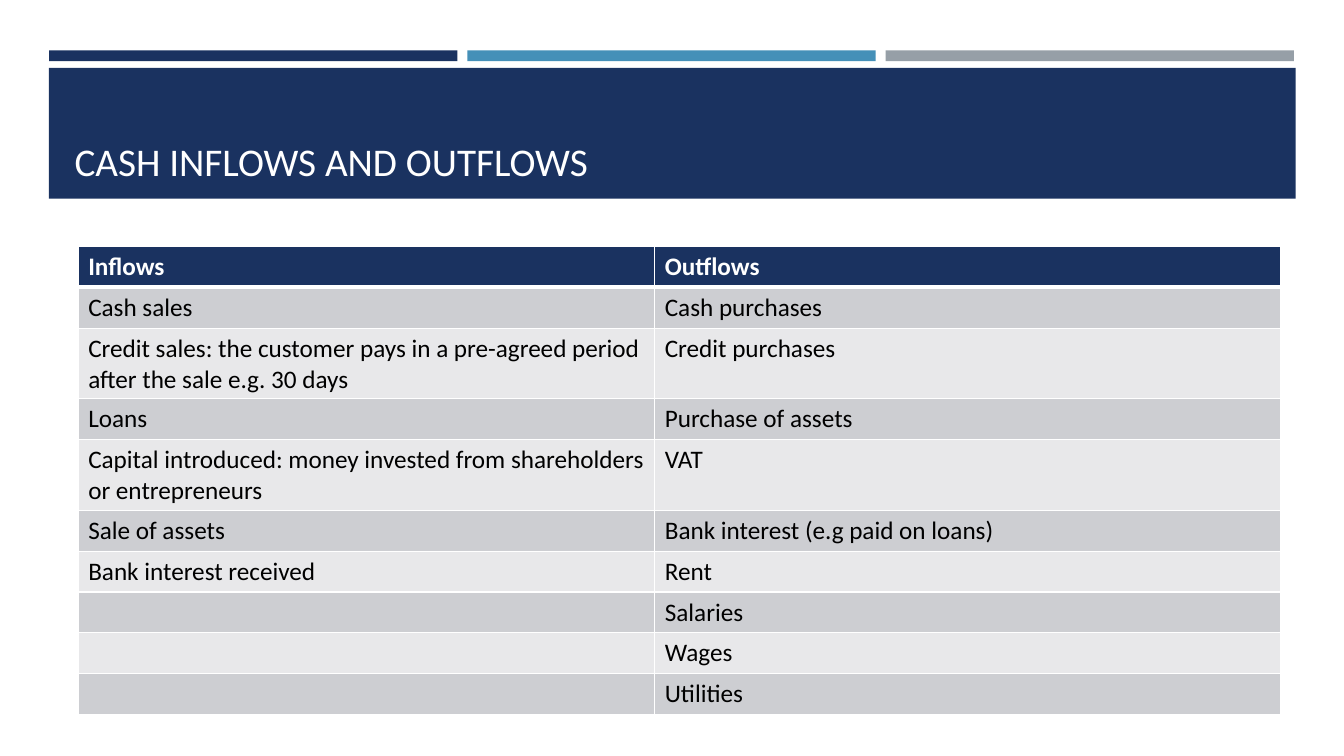
from lxml import etree
from pptx import Presentation
from pptx.dml.color import RGBColor
from pptx.enum.shapes import MSO_SHAPE
from pptx.enum.text import MSO_ANCHOR
from pptx.oxml.ns import qn
from pptx.util import Cm, Pt

RECT = MSO_SHAPE.RECTANGLE
TOP, BOTTOM = MSO_ANCHOR.TOP, MSO_ANCHOR.BOTTOM

COLORS = {
    "navy": "1A3260",
    "blue": "4590B8",
    "gray": "969FA7",
    "band_dark": "CDCED2",
    "band_light": "E8E8EA",
    "white": "FFFFFF",
    "black": "000000",
}

CASH_FLOWS = [
    ("Inflows", "Outflows"),
    ("Cash sales", "Cash purchases"),
    ("Credit sales: the customer pays in a pre-agreed period after the sale e.g. 30 days",
     "Credit purchases"),
    ("Loans", "Purchase of assets"),
    ("Capital introduced: money invested from shareholders or entrepreneurs", "VAT"),
    ("Sale of assets", "Bank interest (e.g paid on loans)"),
    ("Bank interest received", "Rent"),
    ("", "Salaries"),
    ("", "Wages"),
    ("", "Utilities"),
]


def rgb(name):
    return RGBColor.from_string(COLORS[name])


def write(tf, text, size=18, color="black", bold=False, font="Calibri", anchor=TOP):
    tf.word_wrap = True
    tf.vertical_anchor = anchor
    p = tf.paragraphs[0]
    p.font.size = Pt(size)
    if text:
        r = p.add_run()
        r.text = text
        r.font.name = font
        r.font.size = Pt(size)
        r.font.bold = bold
        r.font.color.rgb = rgb(color)


def set_borders(cell, color="white", **widths):
    tcPr = cell._tc.get_or_add_tcPr()
    for i, side in enumerate("LRTB"):
        ln = etree.Element(qn(f"a:ln{side}"), w=str(Pt(widths.get(side, 1))))
        fill = etree.SubElement(ln, qn("a:solidFill"))
        etree.SubElement(fill, qn("a:srgbClr"), val=COLORS[color])
        tcPr.insert(i, ln)


class SlideBuilder:
    def __init__(self, prs):
        self.s = prs.slides.add_slide(prs.slide_layouts[6])

    def bar(self, left, top, width, height, color):
        sp = self.s.shapes.add_shape(RECT, Cm(left), Cm(top), Cm(width), Cm(height))
        sp.shadow.inherit = False
        sp.fill.solid()
        sp.fill.fore_color.rgb = rgb(color)
        sp.line.fill.background()

    def text(self, left, top, width, height, text, **fmt):
        sp = self.s.shapes.add_textbox(Cm(left), Cm(top), Cm(width), Cm(height))
        write(sp.text_frame, text, **fmt)

    def table(self, left, top, col_widths, row_height, rows):
        frame = self.s.shapes.add_table(
            len(rows), len(col_widths), Cm(left), Cm(top),
            Cm(sum(col_widths)), Cm(row_height * len(rows)))
        table = frame.table
        for col, width in zip(table.columns, col_widths):
            col.width = Cm(width)
        for i, values in enumerate(rows):
            table.rows[i].height = Cm(row_height)
            header = i == 0
            band = "navy" if header else "band_dark" if i % 2 else "band_light"
            for j, value in enumerate(values):
                cell = table.cell(i, j)
                cell.fill.solid()
                cell.fill.fore_color.rgb = rgb(band)
                set_borders(cell, T=3 if i == 1 else 1, B=3 if header else 1)
                write(cell.text_frame, value, bold=header,
                      color="white" if header else "black")


def main():
    prs = Presentation()
    prs.slide_width, prs.slide_height = Cm(33.87), Cm(19.05)
    slide = SlideBuilder(prs)
    for i, color in enumerate(("navy", "blue", "gray")):
        slide.bar(1.24 + i * 10.54, 1.27, 10.29, 0.27, color)
    slide.bar(1.23, 1.71, 31.42, 3.3, "navy")
    slide.text(1.63, 1.96, 30.63, 2.82, "CASH INFLOWS AND OUTFLOWS",
               size=28, color="white", anchor=BOTTOM)
    slide.table(1.97, 6.21, (14.53, 15.77), 1.03, CASH_FLOWS)
    prs.save("out.pptx")


if __name__ == "__main__":
    main()
